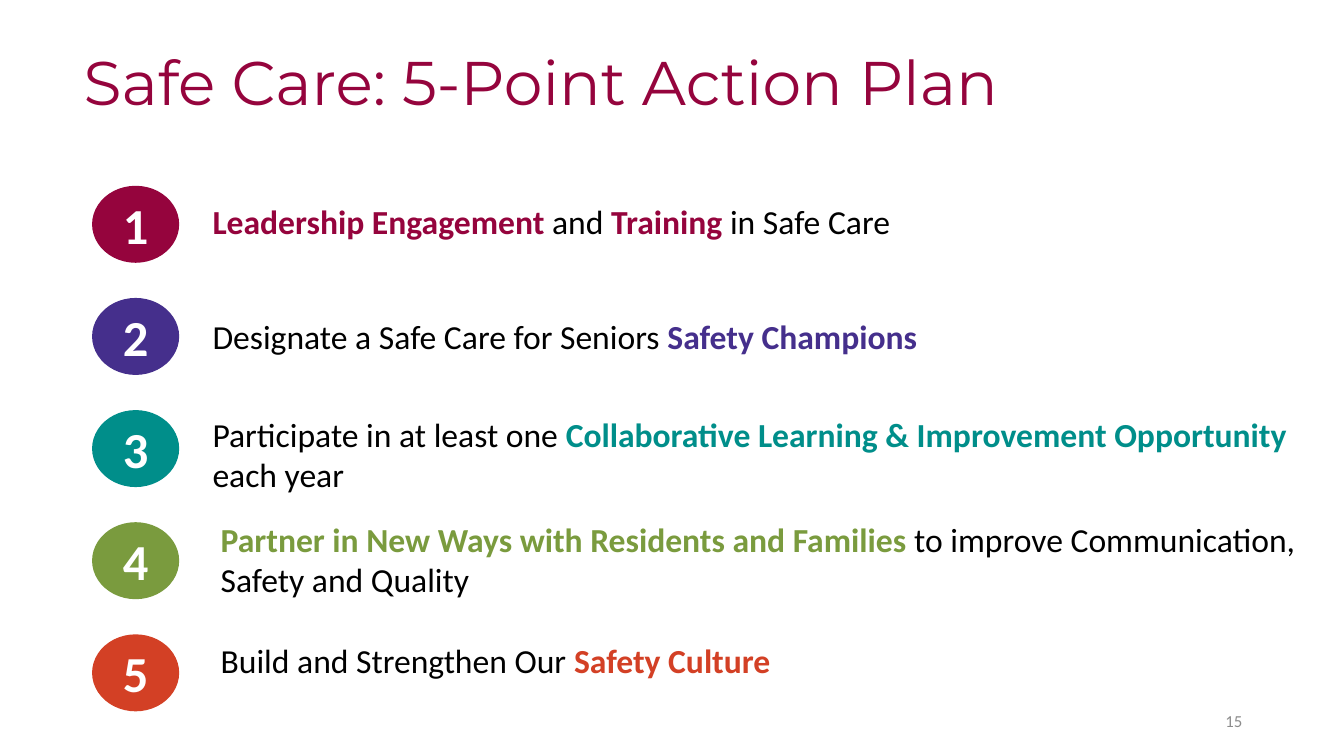
from dataclasses import dataclass

from pptx import Presentation
from pptx.dml.color import RGBColor
from pptx.enum.shapes import MSO_SHAPE
from pptx.enum.text import MSO_ANCHOR, MSO_AUTO_SIZE, PP_ALIGN
from pptx.slide import Slide
from pptx.text.text import _Run as Run
from pptx.util import Inches, Pt

CRIMSON = RGBColor(0x95, 0x04, 0x3D)
PURPLE = RGBColor(0x45, 0x2F, 0x8C)
TEAL = RGBColor(0x00, 0x8E, 0x8A)
GREEN = RGBColor(0x7A, 0x9B, 0x3E)
ORANGE = RGBColor(0xD3, 0x40, 0x25)
BLACK = RGBColor(0x00, 0x00, 0x00)
WHITE = RGBColor(0xFF, 0xFF, 0xFF)
GREY = RGBColor(0x8C, 0x8C, 0x8C)

BODY_FONT = "Calibri"
TITLE_FONT = "Montserrat"

BADGE_LEFT, BADGE_WIDTH, BADGE_HEIGHT = 0.92, 0.85, 0.75
FIRST_ROW, ROW_STEP = 1.85, 1.1125
TEXT_COLUMN, INDENTED_COLUMN = 2.01, 2.09


@dataclass(frozen=True)
class Span:
    text: str
    strong: bool = False


@dataclass(frozen=True)
class ActionPoint:
    """One numbered row; drop is the text's offset below the row's top."""
    color: RGBColor
    left: float
    drop: float
    width: float
    height: float
    spans: tuple[Span, ...]


ACTION_POINTS = (
    ActionPoint(CRIMSON, TEXT_COLUMN, 0.09, 8.36, 0.5, (
        Span("Leadership Engagement ", True), Span("and "),
        Span("Training", True), Span(" in Safe Care"))),
    ActionPoint(PURPLE, TEXT_COLUMN, 0.12, 10.44, 0.5, (
        Span("Designate a Safe Care for Seniors "),
        Span("Safety Champions", True))),
    ActionPoint(TEAL, TEXT_COLUMN, -0.02, 10.97, 0.91, (
        Span("Participate in at least one "),
        Span("Collaborative Learning & Improvement Opportunity ", True),
        Span("each year"))),
    ActionPoint(GREEN, INDENTED_COLUMN, -0.09, 10.97, 0.91, (
        Span("Partner in New Ways with Residents and Families ", True),
        Span("to improve Communication, Safety and Quality"))),
    ActionPoint(ORANGE, INDENTED_COLUMN, 0, 10.44, 0.5, (
        Span("Build and Strengthen Our "), Span("Safety Culture", True))),
)


def format_run(run: Run, size: float, color: RGBColor,
               bold: bool = False, font: str = BODY_FONT) -> None:
    run.font.name = font
    run.font.size = Pt(size)
    run.font.bold = bold
    run.font.color.rgb = color


def add_title(page: Slide, text: str) -> None:
    title = page.shapes.title
    title.left, title.top = Inches(0.73), Inches(0.12)
    title.width, title.height = Inches(11.5), Inches(1.45)
    frame = title.text_frame
    frame.text = text
    frame.vertical_anchor = MSO_ANCHOR.MIDDLE
    paragraph = frame.paragraphs[0]
    paragraph.alignment = PP_ALIGN.LEFT
    paragraph.line_spacing = 0.9
    format_run(paragraph.runs[0], 44, CRIMSON, font=TITLE_FONT)


def add_badge(page: Slide, number: int, top: float, color: RGBColor) -> None:
    badge = page.shapes.add_shape(
        MSO_SHAPE.OVAL, Inches(BADGE_LEFT), Inches(top),
        Inches(BADGE_WIDTH), Inches(BADGE_HEIGHT))
    badge.shadow.inherit = False
    badge.fill.solid()
    badge.fill.fore_color.rgb = color
    badge.line.color.rgb = color
    badge.line.width = Pt(1)
    frame = badge.text_frame
    frame.text = str(number)
    frame.vertical_anchor = MSO_ANCHOR.MIDDLE
    paragraph = frame.paragraphs[0]
    paragraph.alignment = PP_ALIGN.CENTER
    format_run(paragraph.runs[0], 36, WHITE, bold=True)


def add_point_text(page: Slide, point: ActionPoint, row_top: float) -> None:
    box = page.shapes.add_textbox(
        Inches(point.left), Inches(row_top + point.drop),
        Inches(point.width), Inches(point.height))
    frame = box.text_frame
    frame.word_wrap = True
    frame.auto_size = MSO_AUTO_SIZE.SHAPE_TO_FIT_TEXT
    for span in point.spans:
        run = frame.paragraphs[0].add_run()
        run.text = span.text
        format_run(run, 24, point.color if span.strong else BLACK, span.strong)


def add_page_number(page: Slide, number: int) -> None:
    box = page.shapes.add_textbox(
        Inches(9.42), Inches(6.95), Inches(3), Inches(0.4))
    frame = box.text_frame
    frame.word_wrap = True
    frame.text = str(number)
    frame.vertical_anchor = MSO_ANCHOR.MIDDLE
    paragraph = frame.paragraphs[0]
    paragraph.alignment = PP_ALIGN.RIGHT
    format_run(paragraph.runs[0], 12, GREY)


def main() -> None:
    deck = Presentation()
    deck.slide_width, deck.slide_height = Inches(13.33), Inches(7.5)
    page = deck.slides.add_slide(deck.slide_layouts.get_by_name("Title Only"))
    add_title(page, "Safe Care: 5-Point Action Plan")
    for row, point in enumerate(ACTION_POINTS):
        row_top = FIRST_ROW + row * ROW_STEP
        add_badge(page, row + 1, row_top, point.color)
        add_point_text(page, point, row_top)
    add_page_number(page, 15)
    deck.save("out.pptx")


if __name__ == "__main__":
    main()
